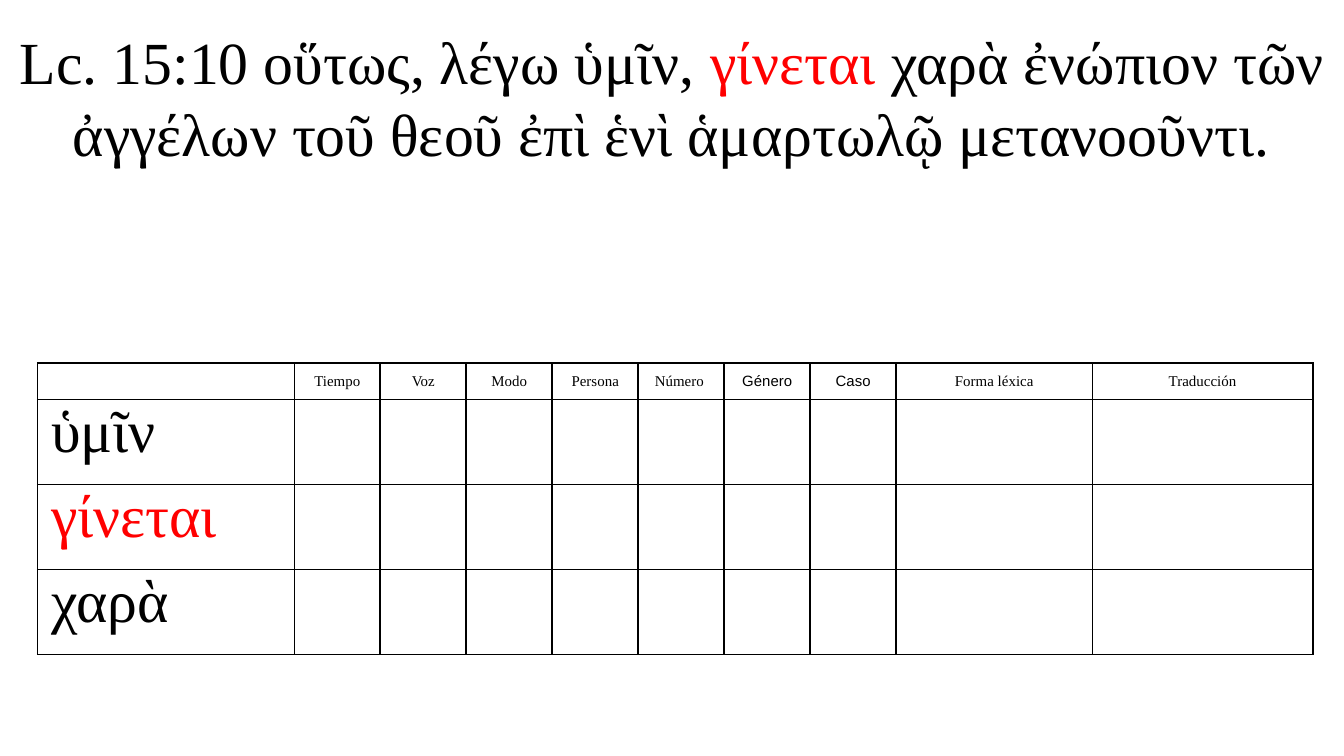
from lxml import etree
from pptx import Presentation
from pptx.dml.color import RGBColor
from pptx.enum.text import MSO_ANCHOR, PP_ALIGN
from pptx.oxml.ns import qn
from pptx.util import Inches, Pt

MIDDLE, TOP = MSO_ANCHOR.MIDDLE, MSO_ANCHOR.TOP
CENTER, LEFT = PP_ALIGN.CENTER, PP_ALIGN.LEFT
BLACK, RED = "000000", "FF0000"
SERIF, SANS = "Times New Roman", "Arial"
VERSE_SIZE, HEADING_SIZE = 32, 8
SLIDE_WIDTH = Inches(10)
SLIDE_HEIGHT = SLIDE_WIDTH * 9 // 16

VERSE = [
    ("Lc. 15:10 οὕτως, λέγω ὑμῖν, ", BLACK),
    ("γίνεται ", RED),
    ("χαρὰ ἐνώπιον τῶν ἀγγέλων τοῦ θεοῦ ἐπὶ ἑνὶ ἁμαρτωλῷ μετανοοῦντι.", BLACK),
]
HEADINGS = ["", "Tiempo", "Voz", "Modo", "Persona", "Número ", "Género", "Caso",
            "Forma léxica", "Traducción"]
SANS_HEADINGS = {"Género", "Caso"}
WORDS = [("ὑμῖν", BLACK), ("γίνεται", RED), ("χαρὰ", BLACK)]
COLUMN_WIDTHS = [1.91] + [0.64] * 7 + [1.46, 1.64]
ROW_HEIGHTS = [0.27] + [0.63] * len(WORDS)


def rgb(code):
    return RGBColor.from_string(code)


def style_run(run, size, color, font=SERIF):
    run.font.size = Pt(size)
    run.font.name = font
    run.font.color.rgb = rgb(color)


def add_verse(slide):
    box = slide.shapes.add_textbox(Inches(0.04), Inches(0.13), Inches(9.92), Inches(1.18))
    frame = box.text_frame
    frame.word_wrap = True
    frame.vertical_anchor = MIDDLE
    line = frame.paragraphs[0]
    line.alignment = CENTER
    for words, color in VERSE:
        run = line.add_run()
        run.text = words
        style_run(run, VERSE_SIZE, color)


def set_borders(cell, top_width, bottom_width):
    properties = cell._tc.get_or_add_tcPr()
    for side, width in (("L", 1), ("R", 1), ("T", top_width), ("B", bottom_width)):
        border = etree.SubElement(properties, qn("a:ln" + side), w=str(Pt(width)))
        fill = etree.SubElement(border, qn("a:solidFill"))
        etree.SubElement(fill, qn("a:srgbClr"), val=BLACK)


def fill_cell(cell, content, size, color, font, alignment):
    paragraph = cell.text_frame.paragraphs[0]
    paragraph.alignment = alignment
    if content:
        paragraph.text = content
        style_run(paragraph.runs[0], size, color, font)
    else:
        etree.SubElement(paragraph._p, qn("a:endParaRPr"), sz=str(size * 100))


def set_margins(cell, top, bottom):
    cell.margin_left = cell.margin_right = Inches(0.1)
    cell.margin_top, cell.margin_bottom = Inches(top), Inches(bottom)


def add_parsing_table(slide):
    frame = slide.shapes.add_table(
        len(ROW_HEIGHTS), len(COLUMN_WIDTHS), Inches(0.28), Inches(2.7),
        Inches(sum(COLUMN_WIDTHS)), Inches(sum(ROW_HEIGHTS)))
    table = frame.table
    table.first_row = table.horz_banding = False
    for column, width in zip(table.columns, COLUMN_WIDTHS):
        column.width = Inches(width)
    for row, height in zip(table.rows, ROW_HEIGHTS):
        row.height = Inches(height)

    for index, row in enumerate(table.rows):
        for cell in row.cells:
            set_borders(cell, 0.75 if index else 1, 0.75)
            cell.fill.background()
    for column, heading in enumerate(HEADINGS):
        cell = table.cell(0, column)
        cell.vertical_anchor = MIDDLE
        set_margins(cell, 0.04, 0.04)
        font = SANS if heading in SANS_HEADINGS else SERIF
        fill_cell(cell, heading, HEADING_SIZE, BLACK, font, CENTER)
    for row, (word, color) in enumerate(WORDS, start=1):
        cell = table.cell(row, 0)
        cell.vertical_anchor = TOP
        set_margins(cell, 0, 0.1)
        fill_cell(cell, word, VERSE_SIZE, color, SERIF, LEFT)


def main():
    deck = Presentation()
    deck.slide_width, deck.slide_height = SLIDE_WIDTH, SLIDE_HEIGHT
    slide = deck.slides.add_slide(deck.slide_layouts[6])
    add_verse(slide)
    add_parsing_table(slide)
    deck.save("out.pptx")


if __name__ == "__main__":
    main()
